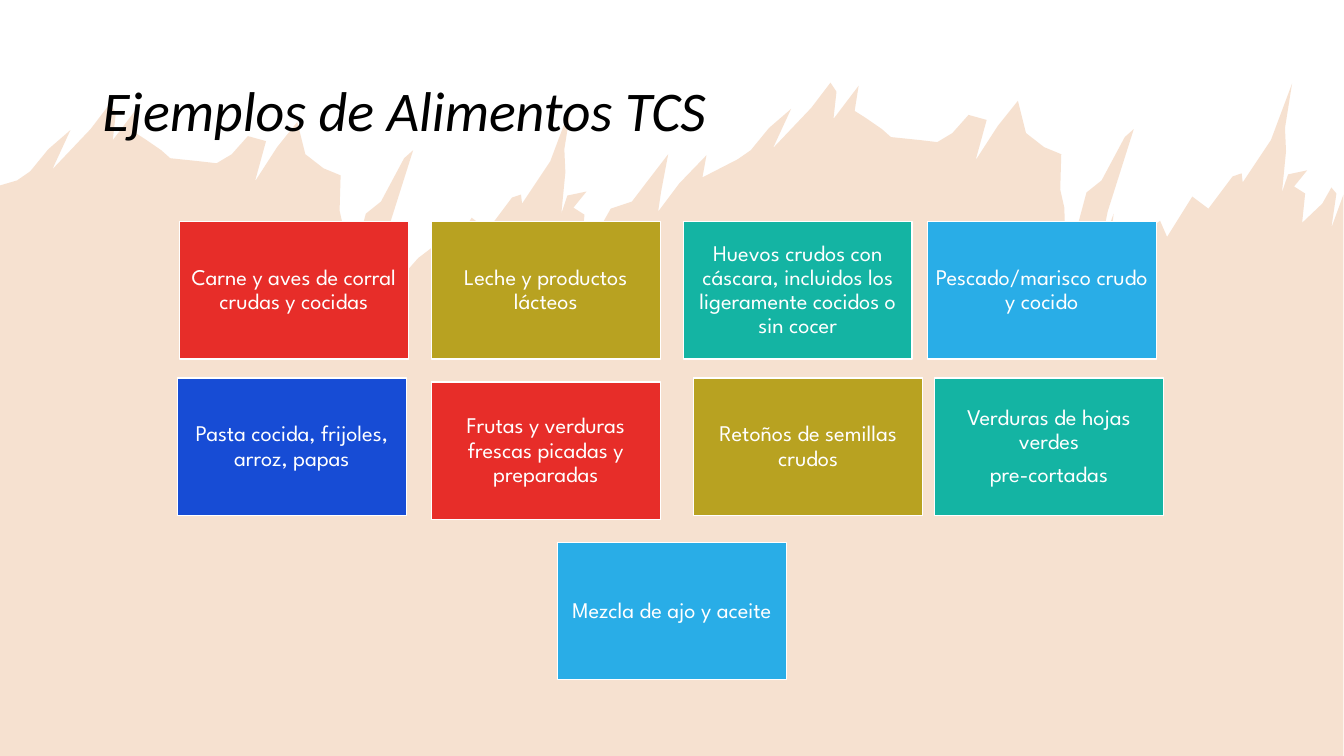
from typing import NamedTuple

from lxml import etree
from pptx import Presentation
from pptx.dml.color import RGBColor
from pptx.enum.shapes import MSO_SHAPE
from pptx.enum.text import MSO_ANCHOR, PP_ALIGN
from pptx.oxml.ns import qn
from pptx.util import Cm, Pt

RECTANGLE = MSO_SHAPE.RECTANGLE
MIDDLE = MSO_ANCHOR.MIDDLE
CENTER = PP_ALIGN.CENTER

WHITE = RGBColor(0xFF, 0xFF, 0xFF)
BLACK = RGBColor(0x00, 0x00, 0x00)
ORANGE = RGBColor(0xD5, 0x6A, 0x17)
RED = RGBColor(0xE7, 0x2D, 0x29)
OLIVE = RGBColor(0xB8, 0xA2, 0x21)
TEAL = RGBColor(0x14, 0xB4, 0xA3)
SKY = RGBColor(0x29, 0xAD, 0xE7)
BLUE = RGBColor(0x17, 0x4C, 0xD5)

CARD_WIDTH = Cm(5.77)
CARD_HEIGHT = Cm(3.46)
CARD_INSET = Cm(0.18)


class Point(NamedTuple):
    x: int
    y: int


class FoodCard(NamedTuple):
    left: float
    top: float
    color: RGBColor
    lines: tuple[str, ...]


FOOD_CARDS = (
    FoodCard(4.52, 5.59, RED, ("Carne y aves de corral crudas y cocidas",)),
    FoodCard(10.87, 5.59, OLIVE, ("Leche y productos lácteos",)),
    FoodCard(17.22, 5.59, TEAL,
             ("Huevos crudos con cáscara, incluidos los ligeramente cocidos o sin cocer",)),
    FoodCard(23.37, 5.59, SKY, ("Pescado/marisco crudo y cocido",)),
    FoodCard(4.47, 9.53, BLUE, ("Pasta cocida, frijoles, arroz, papas",)),
    FoodCard(10.87, 9.63, RED, ("Frutas y verduras frescas picadas y preparadas",)),
    FoodCard(17.48, 9.53, OLIVE, ("Retoños de semillas crudos",)),
    FoodCard(23.55, 9.53, TEAL, ("Verduras de hojas verdes", "pre-cortadas")),
    FoodCard(14.05, 13.67, SKY, ("Mezcla de ajo y aceite",)),
)

# Brush edge in units of BRUSH_UNIT. The crest appears twice.
BRUSH_UNIT = Cm(0.0254)
SLIDE_RIGHT, SLIDE_BOTTOM = 1333, 750
CREST_SHIFT = Point(715, -21)
CREST = (
    (30, 170), (48, 148), (70, 129), (52, 168), (90, 128), (109, 103), (115, 112),
    (112, 139), (137, 106), (133, 131), (144, 138), (160, 149), (169, 157),
    (198, 160), (215, 162), (230, 153), (246, 135), (264, 140), (253, 180),
    (275, 146), (295, 121), (303, 153), (321, 167), (338, 174), (337, 209),
    (341, 227), (342, 255), (355, 242), (363, 212), (378, 200), (401, 157),
    (410, 149), (384, 231), (376, 271), (390, 233), (387, 259), (400, 273),
    (415, 256), (436, 240), (443, 256), (468, 216), (484, 228), (508, 196),
    (517, 193), (518, 202), (546, 160), (567, 104), (560, 148), (561, 171),
    (557, 212), (563, 194), (582, 190), (569, 206), (580, 213), (577, 242),
    (597, 223), (606, 207),
)
BRIDGE = (
    (627, 200), (643, 179), (663, 153), (656, 190), (653, 210), (674, 182),
    (701, 154), (697, 176), (732, 158),
)
RIGHT_EDGE = ((1326, 192), (1321, 226), (SLIDE_RIGHT, 193))


def add_brush_background(slide) -> None:
    shifted_crest = [(x + CREST_SHIFT.x, y + CREST_SHIFT.y) for x, y in CREST]
    outline = [(0, 184), (17, 179), *CREST, *BRIDGE, *shifted_crest, *RIGHT_EDGE,
               (SLIDE_RIGHT, SLIDE_BOTTOM), (0, SLIDE_BOTTOM)]
    builder = slide.shapes.build_freeform(*outline[0], scale=BRUSH_UNIT)
    builder.add_line_segments(outline[1:], close=True)
    shape = builder.convert_to_shape()
    shape.shadow.inherit = False
    shape.line.fill.background()
    shape.fill.solid()
    shape.fill.fore_color.rgb = ORANGE
    color_element = next(shape._element.spPr.iter(qn("a:srgbClr")))
    etree.SubElement(color_element, qn("a:alpha"), val="20000")


def add_run(paragraph, text: str, font_name: str, size: int, color: RGBColor):
    paragraph.line_spacing = 0.9
    run = paragraph.add_run()
    run.text = text
    run.font.name = font_name
    run.font.size = Pt(size)
    run.font.color.rgb = color
    return run


def add_title(slide) -> None:
    title = slide.shapes.add_textbox(Cm(2.33), Cm(1.01), Cm(29.21), Cm(3.68))
    frame = title.text_frame
    frame.word_wrap = True
    frame.vertical_anchor = MIDDLE
    run = add_run(frame.paragraphs[0], "Ejemplos de Alimentos TCS", "Calibri", 40, BLACK)
    run.font.italic = True


def add_food_card(slide, card: FoodCard) -> None:
    shape = slide.shapes.add_shape(
        RECTANGLE, Cm(card.left), Cm(card.top), CARD_WIDTH, CARD_HEIGHT)
    shape.shadow.inherit = False
    shape.fill.solid()
    shape.fill.fore_color.rgb = card.color
    shape.line.color.rgb = WHITE
    shape.line.width = Pt(1)
    frame = shape.text_frame
    frame.word_wrap = True
    frame.vertical_anchor = MIDDLE
    frame.margin_left = frame.margin_right = CARD_INSET
    frame.margin_top = frame.margin_bottom = CARD_INSET
    for index, line in enumerate(card.lines):
        paragraph = frame.add_paragraph() if index else frame.paragraphs[0]
        paragraph.alignment = CENTER
        paragraph.space_after = Pt(6)
        add_run(paragraph, line, "League Spartan", 16, WHITE)


def main() -> None:
    presentation = Presentation()
    presentation.slide_width = Cm(33.87)
    presentation.slide_height = Cm(19.05)
    slide = presentation.slides.add_slide(presentation.slide_layouts[6])
    add_brush_background(slide)
    add_title(slide)
    for card in FOOD_CARDS:
        add_food_card(slide, card)
    presentation.save("out.pptx")


if __name__ == "__main__":
    main()
